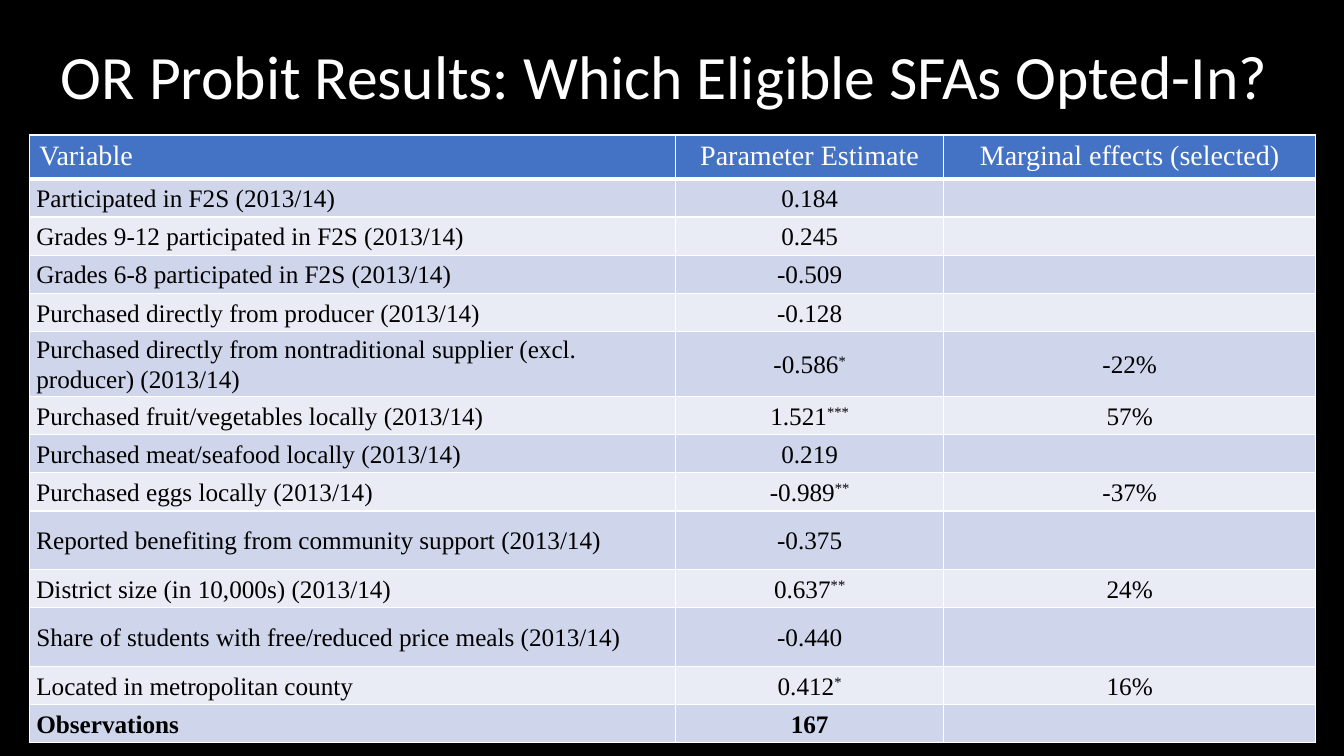
from lxml.etree import SubElement
from pptx import Presentation
from pptx.dml.color import RGBColor
from pptx.enum.text import MSO_ANCHOR as Anchor, PP_ALIGN as Align
from pptx.oxml.ns import qn
from pptx.util import Inches, Pt

BLACK = RGBColor(0x00, 0x00, 0x00)
WHITE = RGBColor(0xFF, 0xFF, 0xFF)
HEADER_BLUE = RGBColor(0x44, 0x72, 0xC4)
BAND_DARK = RGBColor(0xCF, 0xD5, 0xEA)
BAND_LIGHT = RGBColor(0xE9, 0xEB, 0xF5)

SLIDE_WIDTH, SLIDE_HEIGHT = Inches(13.33), Inches(7.5)
COLUMN_SHARES = (48.09, 19.95, 27.68)
HEADER_SHARE, ROW_SHARE, TALL_SHARE = 5.47, 5.06, 7.75
TALL_ROWS = (5, 9, 11)

HEADINGS = ("Variable", "Parameter Estimate", "Marginal effects (selected)")
RESULTS = (
    ("Participated in F2S (2013/14)", "0.184", ""),
    ("Grades 9-12 participated in F2S (2013/14)", "0.245", ""),
    ("Grades 6-8 participated in F2S (2013/14)", "-0.509", ""),
    ("Purchased directly from producer (2013/14)", "-0.128", ""),
    ("Purchased directly from nontraditional supplier (excl. producer) (2013/14)",
     "-0.586*", "-22%"),
    ("Purchased fruit/vegetables locally (2013/14)", "1.521***", "57%"),
    ("Purchased meat/seafood locally (2013/14)", "0.219", ""),
    ("Purchased eggs locally (2013/14)", "-0.989**", "-37%"),
    ("Reported benefiting from community support (2013/14)", "-0.375", ""),
    ("District size (in 10,000s) (2013/14)", "0.637**", "24%"),
    ("Share of students with free/reduced price meals (2013/14)", "-0.440", ""),
    ("Located in metropolitan county", "0.412*", "16%"),
    ("Observations", "167", ""),
)


def across(percent):
    """Return a percentage of the slide's width."""
    return int(SLIDE_WIDTH * percent / 100)


def down(percent):
    """Return a percentage of the slide's height."""
    return int(SLIDE_HEIGHT * percent / 100)


def format_font(font, name, size, color, bold=False):
    """Set the typeface, size, colour and weight of a font."""
    font.name, font.size, font.bold = name, Pt(size), bold
    font.color.rgb = color


def add_title(page, text):
    """Add the centred slide title."""
    box = page.shapes.add_textbox(across(2.1), down(1.2), across(95.8), down(18.67))
    frame = box.text_frame
    frame.word_wrap = True
    frame.vertical_anchor = Anchor.MIDDLE
    frame.text = text
    para = frame.paragraphs[0]
    para.alignment, para.line_spacing = Align.CENTER, 0.9
    format_font(para.runs[0].font, "Calibri", 44, WHITE)


def add_borders(cell, bottom_width):
    """Draw white lines on the four sides of a cell."""
    properties = cell._tc.get_or_add_tcPr()
    widths = {"lnL": 1, "lnR": 1, "lnT": 1, "lnB": bottom_width}
    for position, (side, width) in enumerate(widths.items()):
        line = SubElement(properties, qn(f"a:{side}"), w=str(Pt(width)))
        fill = SubElement(line, qn("a:solidFill"))
        SubElement(fill, qn("a:srgbClr"), val=str(WHITE))
        properties.insert(position, line)


def fill_cell(cell, text, fill, size, color, centred, bold=False, bottom_width=1):
    """Write a cell, raising any significance stars."""
    cell.fill.solid()
    cell.fill.fore_color.rgb = fill
    add_borders(cell, bottom_width)
    para = cell.text_frame.paragraphs[0]
    para.alignment = Align.CENTER if centred else Align.LEFT
    format_font(para.font, "Times New Roman", size, color, bold)
    value = text.rstrip("*")
    for part, raised in ((value, False), (text[len(value):], True)):
        if part:
            span = para.add_run()
            span.text = part
            format_font(span.font, "Times New Roman", size, color, bold)
            if raised:
                span.font._element.set("baseline", "30000")


def fit_body_cell(cell):
    """Give a body cell its tight margins, anchor and line spacing."""
    cell.margin_left = cell.margin_right = Inches(0.07)
    cell.margin_top = cell.margin_bottom = 0
    cell.vertical_anchor = Anchor.MIDDLE
    cell.text_frame.paragraphs[0].line_spacing = 1.07


def add_results_table(page):
    """Add the table of probit estimates."""
    heights = [HEADER_SHARE] + [
        TALL_SHARE if number in TALL_ROWS else ROW_SHARE
        for number in range(1, len(RESULTS) + 1)]
    table = page.shapes.add_table(
        len(heights), len(COLUMN_SHARES), across(2.18), down(17.87),
        across(sum(COLUMN_SHARES)), down(sum(heights))).table
    for column, share in zip(table.columns, COLUMN_SHARES):
        column.width = across(share)
    for row, share in zip(table.rows, heights):
        row.height = down(share)
    for column, heading in enumerate(HEADINGS):
        fill_cell(table.cell(0, column), heading, HEADER_BLUE, 20, WHITE,
                  column > 0, bottom_width=3)
    for number, result in enumerate(RESULTS, 1):
        band = BAND_DARK if number % 2 else BAND_LIGHT
        for column, text in enumerate(result):
            cell = table.cell(number, column)
            fill_cell(cell, text, band, 18, BLACK, column > 0,
                      bold=number == len(RESULTS))
            fit_body_cell(cell)


def main():
    """Build and save the slide."""
    deck = Presentation()
    deck.slide_width, deck.slide_height = SLIDE_WIDTH, SLIDE_HEIGHT
    page = deck.slides.add_slide(deck.slide_layouts[6])
    page.background.fill.solid()
    page.background.fill.fore_color.rgb = BLACK
    add_title(page, "OR Probit Results: Which Eligible SFAs Opted-In? ")
    add_results_table(page)
    deck.save("out.pptx")


if __name__ == "__main__":
    main()
